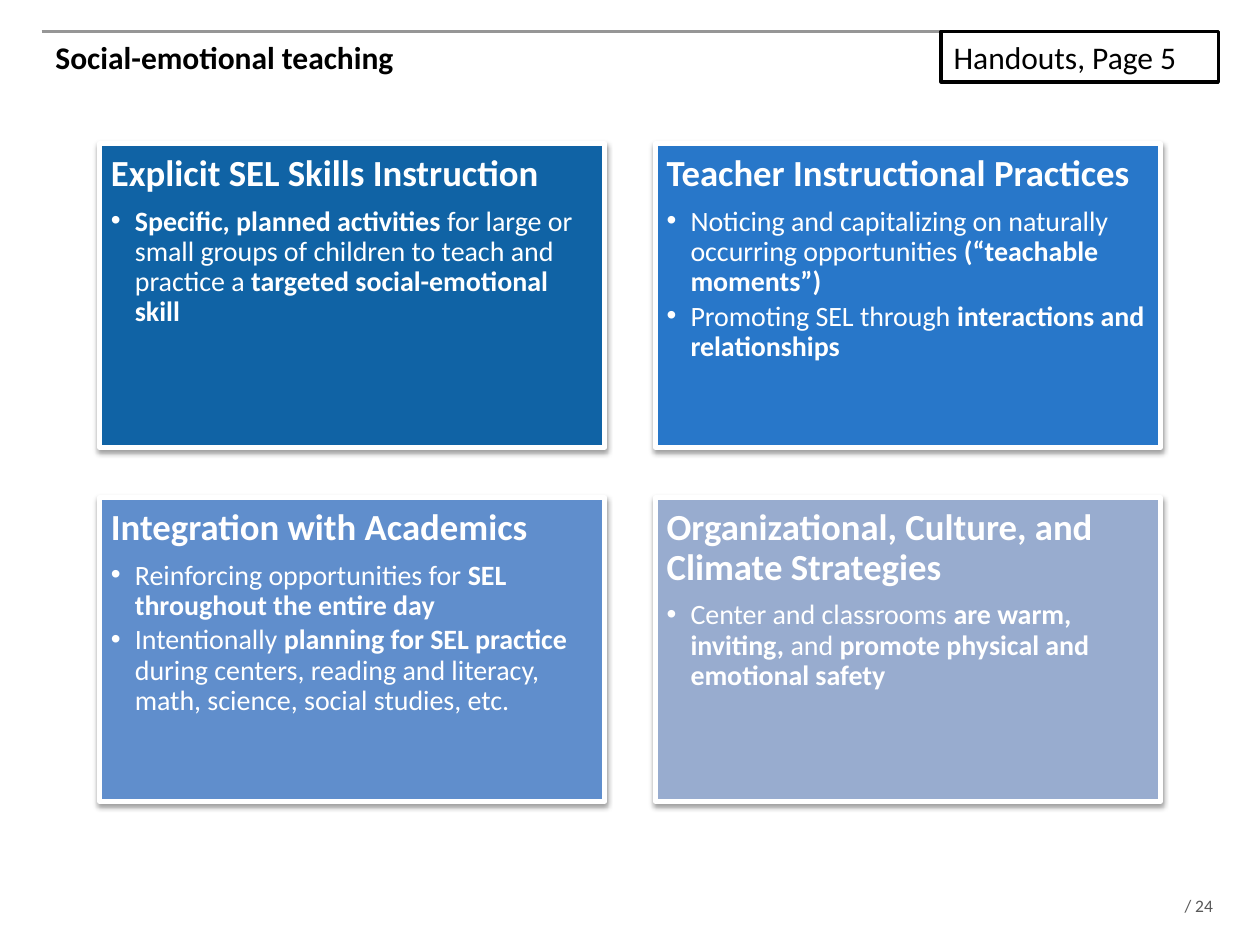
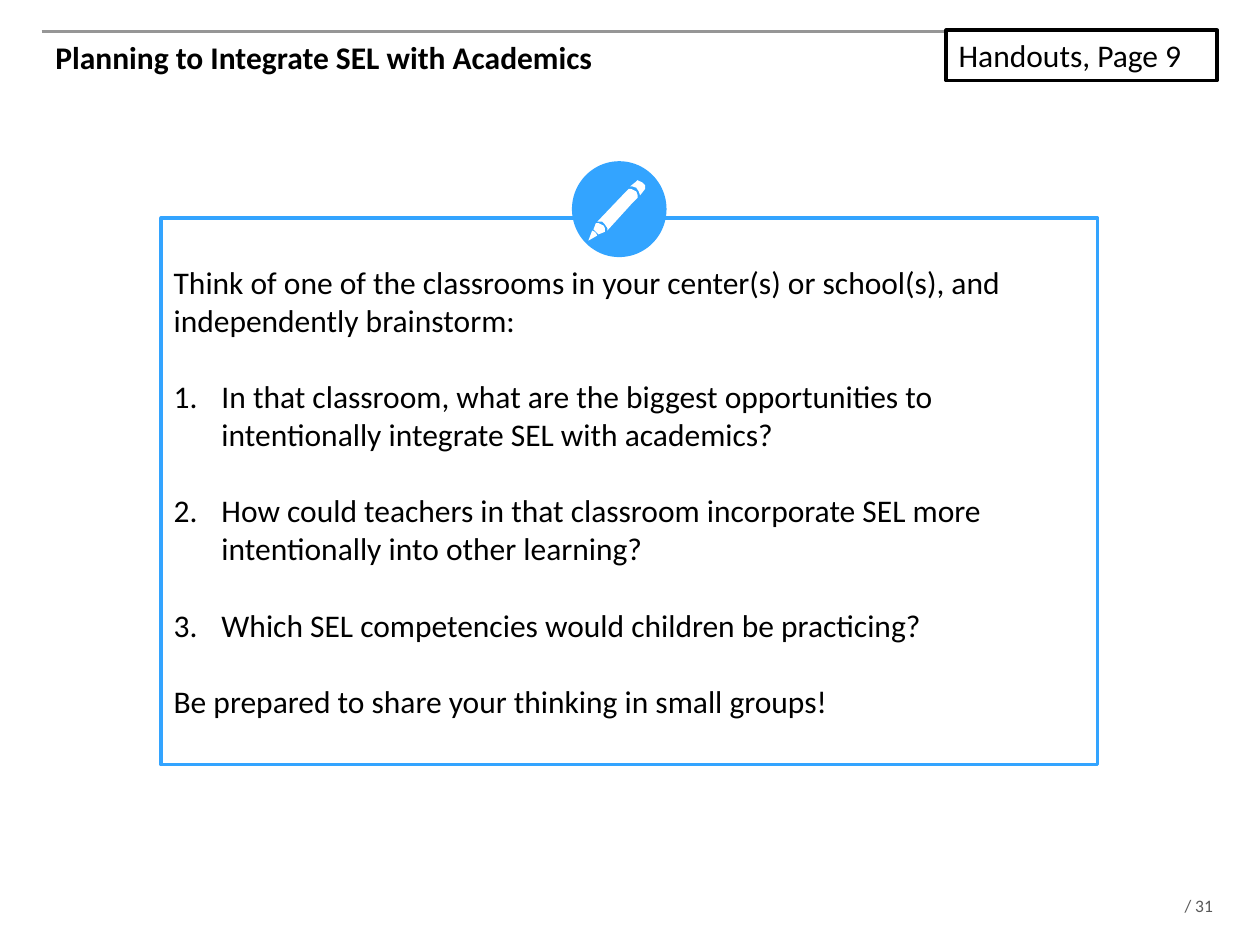
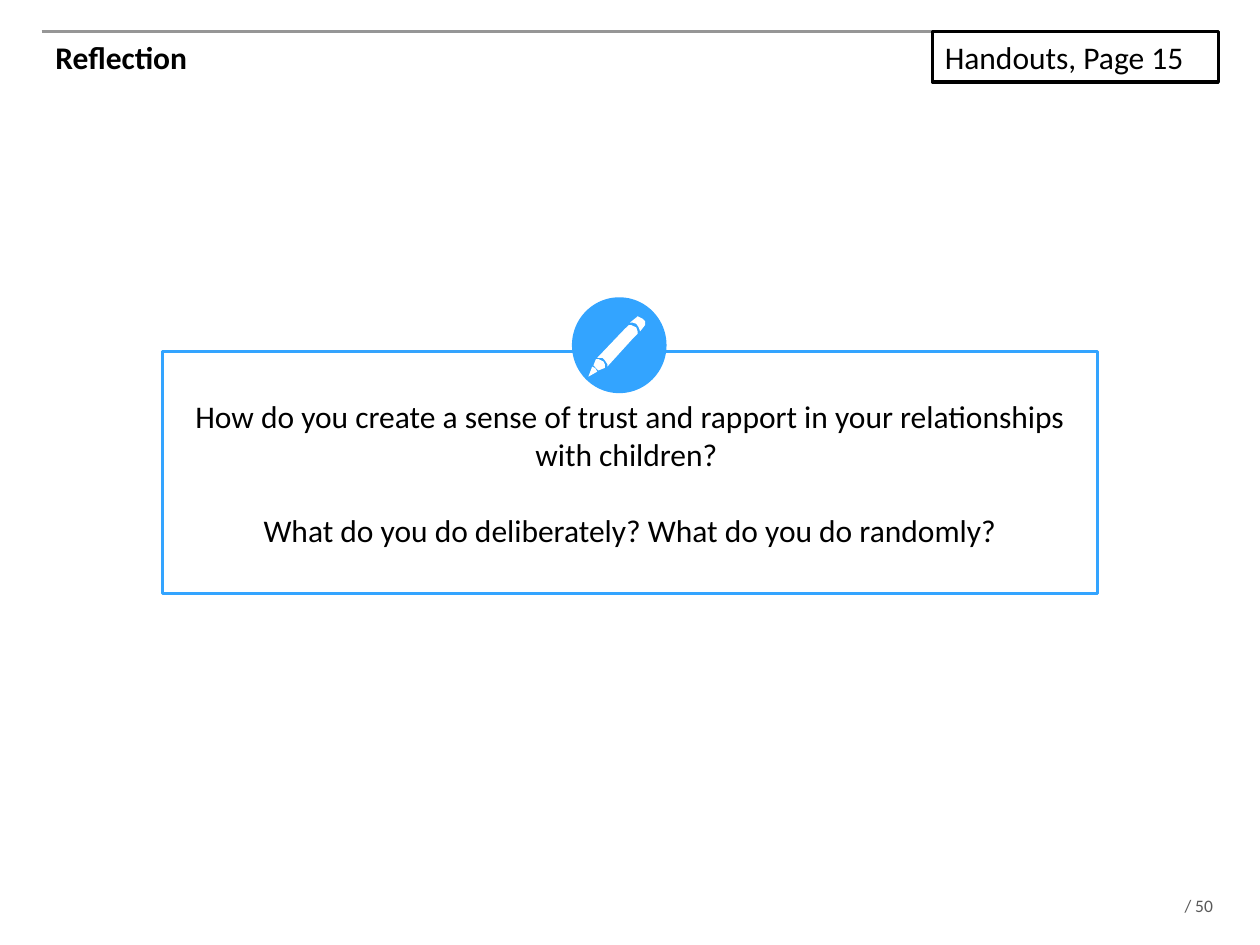
from lxml.etree import SubElement
from pptx import Presentation
from pptx.dml.color import RGBColor
from pptx.enum.shapes import MSO_CONNECTOR, MSO_SHAPE
from pptx.enum.text import MSO_ANCHOR, MSO_AUTO_SIZE, PP_ALIGN
from pptx.oxml.ns import qn
from pptx.util import Inches, Pt

SLIDE_WIDTH, SLIDE_HEIGHT = Inches(10), Inches(7.5)
CELL = SLIDE_WIDTH // 100
FONT = "Calibri"
COLORS = {
    "black": "000000", "white": "FFFFFF", "rule": "969696", "number": "595959",
    "accent": "33A4FF", "explicit": "1063A5", "practices": "2877C9",
    "academics": "608ECC", "climate": "98ACCF",
}
CARDS = [
    ("explicit", "Explicit SEL Skills Instruction", [
        "*Specific, planned activities *for large or small groups of children "
        "to teach and practice a *targeted social-emotional skill*"]),
    ("practices", "Teacher Instructional Practices", [
        "Noticing and capitalizing on naturally occurring opportunities "
        "*(“teachable moments”)*",
        "Promoting SEL through *interactions and relationships*"]),
    ("academics", "Integration with Academics", [
        "Reinforcing opportunities for *SEL throughout the entire day*",
        "Intentionally *planning for SEL practice *during centers, reading and "
        "literacy, math, science, social studies, etc."]),
    ("climate", "Organizational, Culture, and Climate Strategies", [
        "Center and classrooms *are warm, inviting,* and "
        "*promote physical and emotional safety*"]),
]
PENCIL = {
    "collar": [(20, 57), (25, 55), (25, 52), (24, 50), (22, 49), (20, 48),
               (18, 48), (16, 53), (18, 55)],
    "tip": [(15, 54), (12, 62), (19, 58), (18, 56), (17, 55)],
    "eraser": [(45, 19), (47, 19), (50, 20), (52, 23), (53, 26), (57, 21),
               (57, 18), (55, 16), (53, 15), (51, 14), (50, 15)],
    "barrel": [(51, 26), (50, 23), (48, 22), (46, 21), (44, 21), (40, 25),
               (19, 47), (23, 47), (25, 49), (27, 52), (27, 54), (47, 32),
               (51, 28)],
}


def color(name):
    return RGBColor.from_string(COLORS[name])


def cells(*counts):
    return [round(count * CELL) for count in counts]


def apply(target, formats):
    for attribute, value in formats.items():
        setattr(target, attribute, value)


def paint(shape, fill, line, width):
    shape.shadow.inherit = False
    shape.fill.solid()
    shape.fill.fore_color.rgb = color(fill)
    shape.line.color.rgb = color(line)
    shape.line.width = Pt(width)


def set_frame(frame, left=0.1, top=0.05, right=0.1, bottom=0.05):
    apply(frame, {
        "word_wrap": True, "auto_size": MSO_AUTO_SIZE.NONE,
        "vertical_anchor": MSO_ANCHOR.TOP,
        "margin_left": Inches(left), "margin_top": Inches(top),
        "margin_right": Inches(right), "margin_bottom": Inches(bottom)})


def write(paragraph, text, size, ink="black", bold=False, **formats):
    apply(paragraph, {"alignment": PP_ALIGN.LEFT, **formats})
    for index, part in enumerate(text.split("*")):
        if part:
            run = paragraph.add_run()
            run.text = part
            apply(run.font, {"name": FONT, "size": Pt(size),
                             "bold": bold or index % 2 == 1})
            run.font.color.rgb = color(ink)


def next_paragraph(frame, index):
    return frame.add_paragraph() if index else frame.paragraphs[0]


def add_marker(paragraph, indent, tag, **values):
    properties = paragraph._p.get_or_add_pPr()
    properties.set("marL", str(Inches(indent)))
    properties.set("indent", str(-Inches(indent)))
    if tag == "a:buChar":
        SubElement(properties, qn("a:buFont"), typeface="Arial")
    SubElement(properties, qn(tag), **values)


def add_card_shadow(card):
    effects = card._element.spPr.find(qn("a:effectLst"))
    shadow = SubElement(effects, qn("a:outerShdw"), blurRad=str(Pt(3.1)),
                        dist=str(Pt(1.6)), dir="5400000", rotWithShape="0")
    tint = SubElement(shadow, qn("a:srgbClr"), val=COLORS["black"])
    SubElement(tint, qn("a:alpha"), val="38000")


def start_slide(deck, heading, number):
    slide = deck.slides.add_slide(deck.slide_layouts[5])
    title = slide.shapes.title
    apply(title, dict(zip(("left", "top", "width", "height"),
                          cells(3.4, 2.5, 93.2, 9.2))))
    set_frame(title.text_frame)
    write(title.text_frame.paragraphs[0], heading, 18, bold=True)

    rule = slide.shapes.add_connector(
        MSO_CONNECTOR.STRAIGHT, *cells(3.3, 2.5, 96.7, 2.5))
    rule.line.color.rgb = color("rule")
    rule.line.width = Pt(2)
    SubElement(rule._element.spPr, qn("a:effectLst"))

    footer = slide.shapes.add_textbox(*cells(93.7, 71, 6.6, 1.7))
    set_frame(footer.text_frame, 0, 0, 0, 0)
    write(footer.text_frame.paragraphs[0], f" / {number}", 10, "number")
    return slide


def add_handout_tag(slide, page, left, top, width):
    tag = slide.shapes.add_shape(MSO_SHAPE.RECTANGLE,
                                 *cells(left, top, width, 4))
    paint(tag, "white", "black", 2)
    set_frame(tag.text_frame)
    write(tag.text_frame.paragraphs[0], f"Handouts, Page {page}", 18)


def add_card(slide, column, row, fill, heading, points):
    card = slide.shapes.add_shape(
        MSO_SHAPE.RECTANGLE,
        *cells(7.9 + 44.1 * column, 11.4 + 28.1 * row, 40.1, 24.1))
    paint(card, fill, "white", 3)
    add_card_shadow(card)
    frame = card.text_frame
    set_frame(frame, 0.09, 0.09, 0.09, 0.09)
    write(frame.paragraphs[0], heading, 21, "white", True,
          line_spacing=0.9, space_after=Pt(7))
    for point in points:
        paragraph = frame.add_paragraph()
        add_marker(paragraph, 0.19, "a:buChar", char="•")
        write(paragraph, point, 16, "white",
              line_spacing=0.9, space_after=Pt(2.5))


def add_prompt_box(slide, left, top, width, height):
    box = slide.shapes.add_shape(MSO_SHAPE.RECTANGLE,
                                 *cells(left, top, width, height))
    paint(box, "white", "accent", 2)
    set_frame(box.text_frame, top=0.36)
    return box.text_frame


def add_prompts(frame, prompts, alignment=PP_ALIGN.LEFT, numbered=()):
    for index, prompt in enumerate(prompts):
        paragraph = next_paragraph(frame, index)
        if index in numbered:
            add_marker(paragraph, 0.38, "a:buAutoNum", type="arabicPeriod")
        write(paragraph, prompt, 18, alignment=alignment,
              space_before=Pt(22 if index else 0))


def add_pencil_badge(slide, top):
    badge = slide.shapes.add_group_shape()
    left, top, width, height = cells(45.5, top, 7.3, 7.4)
    disc = badge.shapes.add_shape(MSO_SHAPE.OVAL, left, top, width, height)
    paint(disc, "accent", "accent", 1.5)
    for outline in PENCIL.values():
        builder = badge.shapes.build_freeform(*outline[0], scale=CELL / 10)
        builder.add_line_segments(outline[1:], close=True)
        piece = builder.convert_to_shape(left, top)
        paint(piece, "white", "white", 0)
        piece.line.fill.background()


def build_teaching(deck):
    slide = start_slide(deck, "Social-emotional teaching", 24)
    for index, (fill, heading, points) in enumerate(CARDS):
        row, column = divmod(index, 2)
        add_card(slide, column, row, fill, heading, points)
    add_handout_tag(slide, 5, 74.7, 2.5, 22)


def build_planning(deck):
    slide = start_slide(deck, "Planning to Integrate SEL with Academics", 31)
    add_handout_tag(slide, 9, 75.1, 2.4, 21.5)
    frame = add_prompt_box(slide, 12.8, 17.3, 74.3, 43.4)
    add_prompts(frame, [
        "Think of one of the classrooms in your center(s) or school(s), and "
        "independently brainstorm:",
        "In that classroom, what are the biggest opportunities to "
        "intentionally integrate SEL with academics?",
        "How could teachers in that classroom incorporate SEL more "
        "intentionally into other learning?",
        "Which SEL competencies would children be practicing?",
        "Be prepared to share your thinking in small groups!",
    ], numbered=range(1, 4))
    add_pencil_badge(slide, 12.9)


def build_reflection(deck):
    slide = start_slide(deck, "Reflection", 50)
    frame = add_prompt_box(slide, 12.9, 27.9, 74.2, 19.2)
    add_prompts(frame, [
        "How do you create a sense of trust and rapport in your "
        "relationships with children? ",
        "What do you do deliberately? What do you do randomly?",
    ], PP_ALIGN.CENTER)
    add_pencil_badge(slide, 23.7)
    add_handout_tag(slide, 15, 74, 2.5, 22.7)


def main():
    deck = Presentation()
    deck.slide_width, deck.slide_height = SLIDE_WIDTH, SLIDE_HEIGHT
    build_teaching(deck)
    build_planning(deck)
    build_reflection(deck)
    deck.save("out.pptx")


if __name__ == "__main__":
    main()
